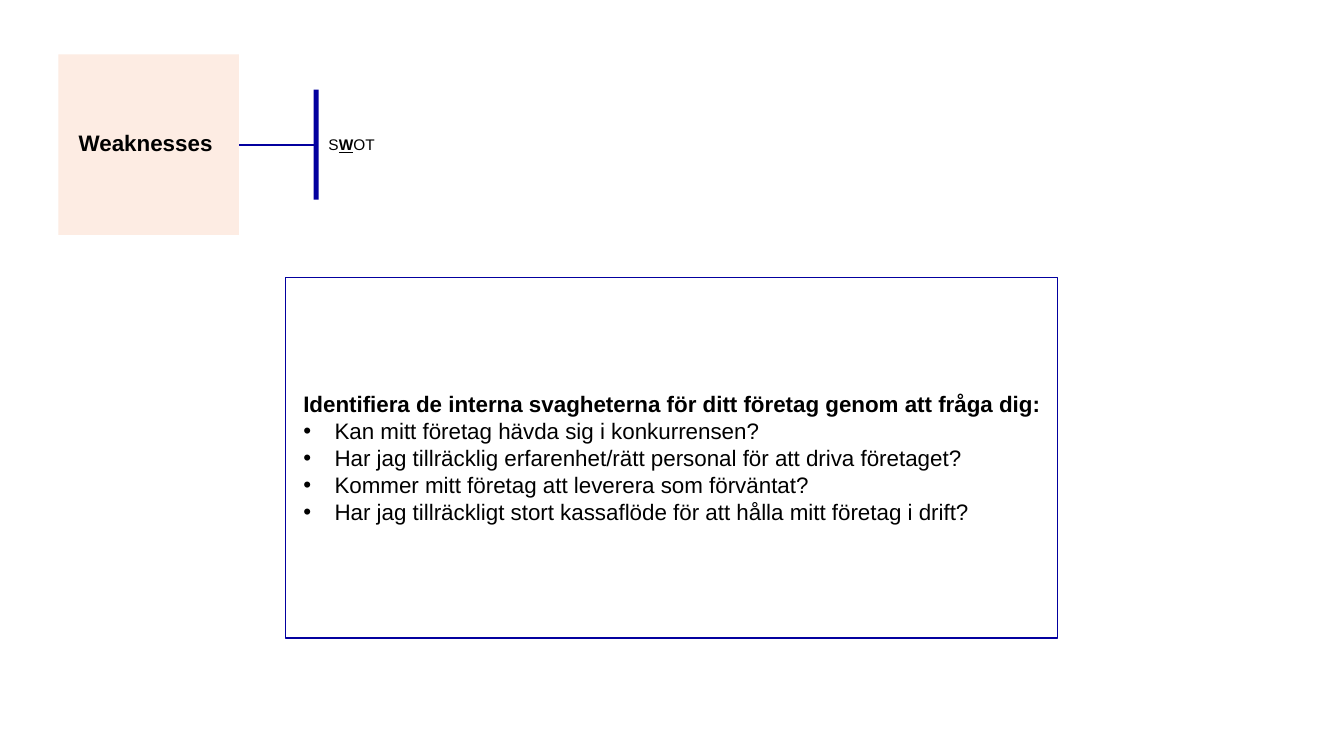
from lxml import etree
from pptx import Presentation
from pptx.dml.color import RGBColor
from pptx.enum.shapes import MSO_CONNECTOR, MSO_SHAPE
from pptx.enum.text import MSO_ANCHOR, PP_ALIGN
from pptx.oxml.ns import qn
from pptx.util import Inches, Pt

RECTANGLE = MSO_SHAPE.RECTANGLE
STRAIGHT = MSO_CONNECTOR.STRAIGHT
MIDDLE = MSO_ANCHOR.MIDDLE
LEFT, CENTER = PP_ALIGN.LEFT, PP_ALIGN.CENTER

FONT = "Arial"
NAVY, PEACH, BLACK = "03009F", "FDECE3", "000000"

HEADING = "Identifiera de interna svagheterna för ditt företag genom att fråga dig:"
QUESTIONS = [
    "Kan mitt företag hävda sig i konkurrensen?",
    "Har jag tillräcklig erfarenhet/rätt personal för att driva företaget?",
    "Kommer mitt företag att leverera som förväntat?",
    "Har jag tillräckligt stort kassaflöde för att hålla mitt företag i drift?",
]


def color(value):
    return RGBColor.from_string(value)


def add_rectangle(slide, left, top, width, height, fill=None, line=None):
    shape = slide.shapes.add_shape(
        RECTANGLE, Inches(left), Inches(top), Inches(width), Inches(height))
    shape.shadow.inherit = False
    if fill:
        shape.fill.solid()
        shape.fill.fore_color.rgb = color(fill)
    else:
        shape.fill.background()
    if line:
        shape.line.color.rgb = color(line)
        shape.line.width = Pt(1)
    else:
        shape.line.fill.background()
    return shape


def add_line(slide, x1, y1, x2, y2):
    connector = slide.shapes.add_connector(
        STRAIGHT, Inches(x1), Inches(y1), Inches(x2), Inches(y2))
    connector.line.color.rgb = color(NAVY)
    connector.line.width = Pt(1)
    etree.SubElement(connector._element.spPr, qn("a:effectLst"))


def add_run(paragraph, text, size, bold=False, underline=False):
    run = paragraph.add_run()
    run.text = text
    run.font.name = FONT
    run.font.size = Pt(size)
    run.font.bold = bold
    run.font.underline = underline
    run.font.color.rgb = color(BLACK)


def set_indent(paragraph, margin, indent=0, bullet=None):
    properties = paragraph._p.get_or_add_pPr()
    properties.set("marL", str(Inches(margin)))
    properties.set("indent", str(Inches(indent)))
    if bullet:
        etree.SubElement(properties, qn("a:buFont")).set("typeface", FONT)
        etree.SubElement(properties, qn("a:buChar")).set("char", bullet)


def add_question_box(slide):
    box = add_rectangle(slide, 2.83, 2.75, 7.66, 3.58, line=NAVY)
    frame = box.text_frame
    frame.word_wrap = True
    frame.vertical_anchor = MIDDLE
    heading = frame.paragraphs[0]
    heading.alignment = LEFT
    set_indent(heading, 0.08)
    add_run(heading, HEADING, 16, bold=True)
    for question in QUESTIONS:
        paragraph = frame.add_paragraph()
        paragraph.alignment = LEFT
        set_indent(paragraph, 0.39, -0.31, "•")
        add_run(paragraph, question, 16)


def add_title_square(slide):
    square = add_rectangle(slide, 0.58, 0.54, 1.79, 1.79, fill=PEACH)
    frame = square.text_frame
    frame.word_wrap = True
    frame.vertical_anchor = MIDDLE
    frame.margin_left = frame.margin_right = 0
    paragraph = frame.paragraphs[0]
    paragraph.alignment = CENTER
    paragraph.line_spacing = 0.9
    add_run(paragraph, "Weaknesses ", 16, bold=True)


def add_swot_label(slide):
    label = slide.shapes.add_textbox(
        Inches(3.16), Inches(1.29), Inches(1.86), Inches(0.29))
    label.text_frame.word_wrap = True
    paragraph = label.text_frame.paragraphs[0]
    add_run(paragraph, "S", 11)
    add_run(paragraph, "W", 11, bold=True, underline=True)
    add_run(paragraph, "OT", 11)


def main():
    presentation = Presentation()
    presentation.slide_width = Inches(13.33)
    presentation.slide_height = Inches(7.5)
    slide = presentation.slides.add_slide(presentation.slide_layouts[6])

    # Questions about internal weaknesses
    add_question_box(slide)

    # Title square joined to the SWOT label
    add_title_square(slide)
    add_line(slide, 3.11, 1.44, 2.37, 1.44)
    add_swot_label(slide)
    add_rectangle(slide, 3.11, 0.89, 0.05, 1.09, fill=NAVY)

    presentation.save("out.pptx")


if __name__ == "__main__":
    main()
